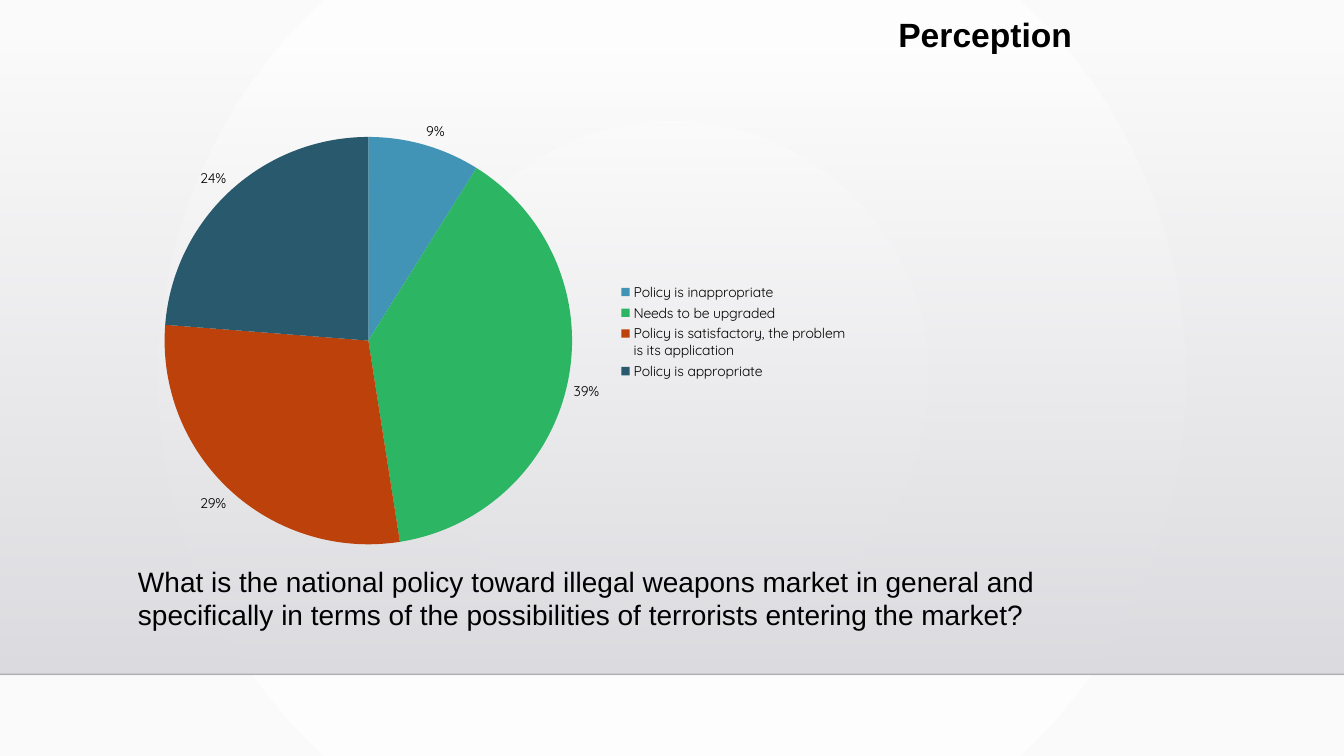
from lxml.etree import SubElement as Sub
from pptx import Presentation
from pptx.chart.data import CategoryChartData as Data
from pptx.dml.color import RGBColor as RGB
from pptx.enum.chart import XL_CHART_TYPE as Kind, XL_LABEL_POSITION as Spot
from pptx.enum.chart import XL_LEGEND_POSITION as Side
from pptx.enum.shapes import MSO_CONNECTOR as Link, MSO_SHAPE as Form
from pptx.enum.text import MSO_ANCHOR as Anchor, MSO_AUTO_SIZE as Fit, PP_ALIGN as Align
from pptx.oxml import parse_xml
from pptx.oxml.ns import nsdecls, qn
from pptx.util import Inches, Pt

WIDE, HIGH = Inches(13.33), Inches(7.5)
BLACK = RGB(0, 0, 0)
RULE = RGB(0, 0, 1)
WHITE, PALE = RGB(255, 255, 255), RGB(0xFA, 0xFA, 0xFA)
MIST, HAZE = RGB(0xDC, 0xDC, 0xE0), RGB(0xDE, 0xDE, 0xE2)
BLUE, GREEN = RGB(0x42, 0x94, 0xB6), RGB(0x2C, 0xB6, 0x63)
RUST, TEAL = RGB(0xBC, 0x41, 0x0A), RGB(0x28, 0x59, 0x6D)

ANSWERS = [
    ("Policy is inappropriate", 9, BLUE),
    ("Needs to be upgraded", 39, GREEN),
    ("Policy is satisfactory, the problem is its application", 29, RUST),
    ("Policy is appropriate", 24, TEAL),
]
ASK = ("What is the national policy toward illegal weapons market in general and "
       "specifically in terms of the possibilities of terrorists entering the market?")


def box(left, top, wide, high):
    return [Inches(n) for n in (left, top, wide, high)]


def blend(fill, first, last):
    """Set a two-stop gradient and return its XML."""
    fill.gradient()
    for stop, color in zip(fill.gradient_stops, (first, last)):
        stop.color.rgb = color
    fill.gradient_stops[0].position = 0
    fill.gradient_stops[1].position = 1
    return fill._fill._gradFill


def fade(node, share):
    """Set the opacity of the first colour in the node."""
    color = next(node.iter(qn("a:srgbClr")))
    Sub(color, qn("a:alpha"), val=str(int(share * 100000)))


def style(font, name, size, bold=None):
    font.name, font.size, font.bold = name, Pt(size), bold
    font.color.rgb = BLACK


def backdrop(slide, left, top, wide, high):
    # Round glow over the whole slide
    grad = blend(slide.background.fill, WHITE, PALE)
    grad.remove(grad.find(qn("a:lin")))
    grad.append(parse_xml(
        f'<a:path {nsdecls("a")} path="circle">'
        '<a:fillToRect l="50000" t="50000" r="50000" b="50000"/></a:path>'))
    # Band that fades in towards the bottom
    band = slide.shapes.add_shape(Form.RECTANGLE, left, top, wide, high)
    band.shadow.inherit = False
    band.line.fill.background()
    grad = blend(band.fill, MIST, HAZE)
    grad.find(qn("a:lin")).set("ang", "5400000")
    fade(grad, 0)
    # Thin rule under the band
    base = top + high
    rule = slide.shapes.add_connector(Link.STRAIGHT, left, base, left + wide, base)
    rule.line.color.rgb = RULE
    rule.line.width = Pt(1)
    fade(rule.line._ln, 0.2)
    Sub(rule._element.spPr, qn("a:effectLst"))
    # Both go behind the title
    tree = slide.shapes._spTree
    for spot, part in enumerate((band, rule), 2):
        tree.insert(spot, part._element)


def write(shape, text, size, bold, wrap):
    frame = shape.text_frame
    frame.word_wrap = wrap
    frame.auto_size = Fit.SHAPE_TO_FIT_TEXT
    frame.vertical_anchor = Anchor.TOP
    frame.text = text
    para = frame.paragraphs[0]
    para.alignment = Align.LEFT
    style(para.font, "Arial", size, bold)


def heading(slide, left, top, wide, high):
    title = slide.shapes.title
    title.left, title.top, title.width, title.height = left, top, wide, high
    write(title, "Perception", 24, True, False)


def question(slide, left, top, wide, high):
    write(slide.shapes.add_textbox(left, top, wide, high), ASK, 20, False, True)


def pie(slide, left, top, wide, high):
    names, counts, colors = zip(*ANSWERS)
    data = Data()
    data.categories = names
    data.add_series("Series 1", counts)
    chart = slide.shapes.add_chart(Kind.PIE, left, top, wide, high, data).chart
    style(chart.font, "Quicksand", 10)
    chart.has_title = False
    # Legend
    chart.has_legend = True
    chart.legend.position = Side.RIGHT
    chart.legend.include_in_layout = False
    style(chart.legend.font, "Quicksand", 10)
    # Slices
    plot = chart.plots[0]
    plot.vary_by_categories = True
    for spot, color in enumerate(colors):
        fill = plot.series[0].points[spot].format.fill
        fill.solid()
        fill.fore_color.rgb = color
    # Percent labels
    labels = plot.series[0].data_labels
    labels.show_percentage = True
    labels.show_value = False
    labels.number_format, labels.number_format_is_linked = "0%", False
    labels.position = Spot.OUTSIDE_END
    style(labels.font, "Quicksand", 10)
    # Place of the disc, as shares of the chart
    area = chart._chartSpace.chart.plotArea
    for old in area.findall(qn("c:layout")):
        area.remove(old)
    layout = parse_xml(f'<c:layout {nsdecls("c")}><c:manualLayout/></c:layout>')
    rules = [("layoutTarget", "inner"), ("xMode", "edge"), ("yMode", "edge"),
             ("x", 0.03), ("y", 0.07), ("w", 0.57), ("h", 0.9)]
    for tag, val in rules:
        Sub(layout[0], qn(f"c:{tag}"), val=str(val))
    area.insert(0, layout)


def main():
    deck = Presentation()
    deck.slide_width, deck.slide_height = WIDE, HIGH
    slide = deck.slides.add_slide(deck.slide_layouts[5])
    backdrop(slide, *box(0, 0.51, 13.33, 6.18))
    heading(slide, *box(8.81, 0.09, 1.94, 0.5))
    question(slide, *box(1.27, 5.55, 10.22, 0.77))
    pie(slide, *box(1.42, 1.03, 7.09, 4.52))
    deck.save("out.pptx")


if __name__ == "__main__":
    main()
